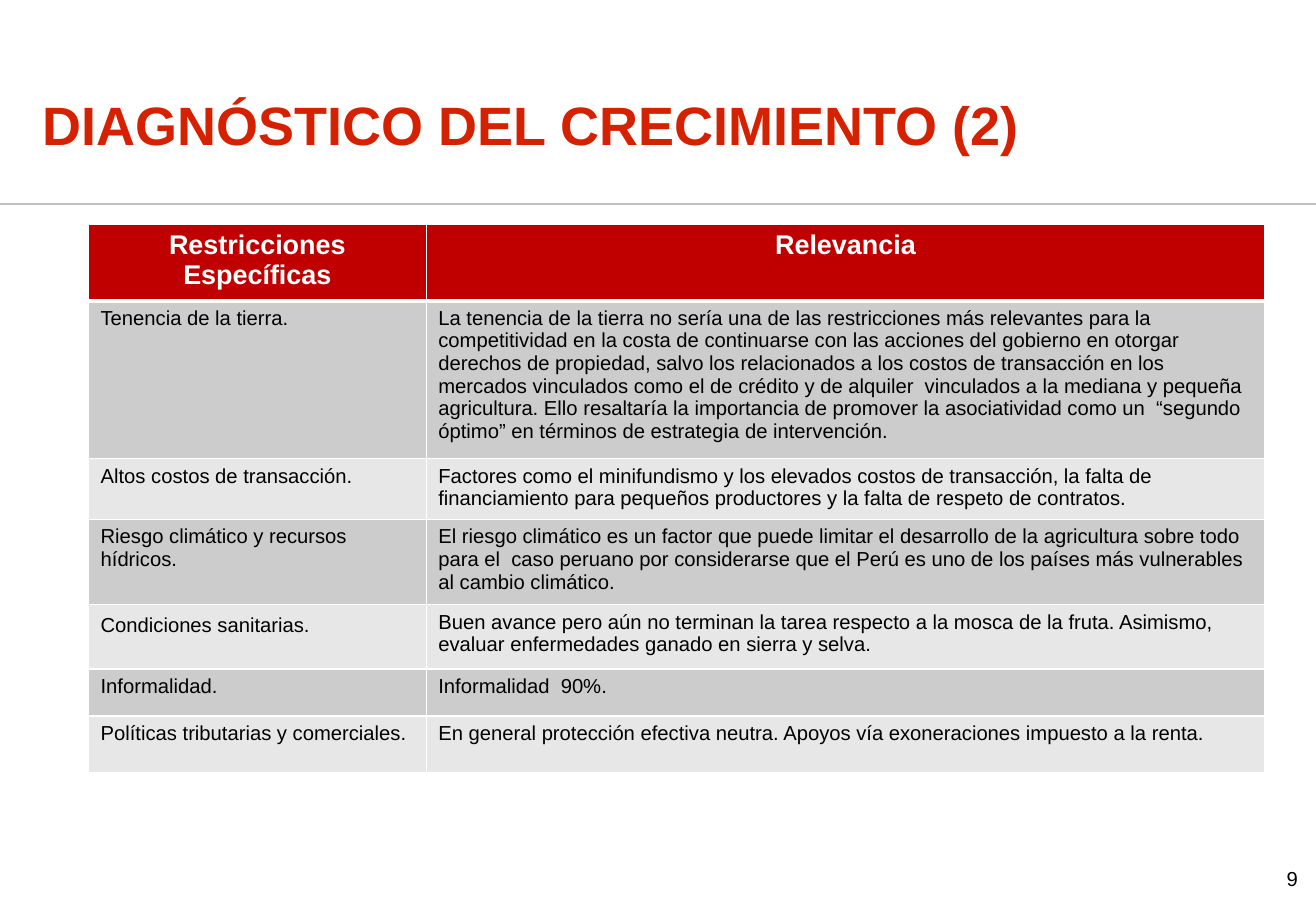
import pptx
import pptx.util
import pptx.dml.color
import pptx.enum.shapes
import pptx.enum.text
import pptx.oxml
import pptx.oxml.ns
from dataclasses import dataclass

Cm, Pt = pptx.util.Cm, pptx.util.Pt
RGB = pptx.dml.color.RGBColor.from_string
ALIGN = pptx.enum.text.PP_ALIGN
ANCHOR = pptx.enum.text.MSO_ANCHOR


@dataclass(frozen=True)
class Theme:
    font: str = "Arial"
    title: str = "D62100"
    rule: str = "BFBFBF"
    header: str = "C00000"
    bands: tuple = ("CCCCCC", "E7E7E7")
    white: str = "FFFFFF"
    text: str = "000000"
    title_size: int = 32
    header_size: int = 16
    body_size: int = 12


theme = Theme()


def write(tf, text, size, color, bold=False, align=ALIGN.LEFT):
    """Fill a text frame with one formatted paragraph and return it."""
    tf.text = text
    tf.word_wrap = True
    p = tf.paragraphs[0]
    p.alignment = align
    font = p.runs[0].font
    font.name, font.size, font.bold = theme.font, Pt(size), bold
    font.color.rgb = RGB(color)
    return p


def add_border(cell, side, width):
    """Draw one white cell edge; side is L, R, T or B."""
    cell._tc.get_or_add_tcPr().append(pptx.oxml.parse_xml(
        f'<a:ln{side} {pptx.oxml.ns.nsdecls("a")} w="{Pt(width)}"><a:solidFill>'
        f'<a:srgbClr val="{theme.white}"/></a:solidFill></a:ln{side}>'))


prs = pptx.Presentation()
prs.slide_width, prs.slide_height = Cm(27.51), Cm(19.05)
s = prs.slides.add_slide(prs.slide_layouts[6])

# Rule under the title
rule = s.shapes.add_connector(pptx.enum.shapes.MSO_CONNECTOR.STRAIGHT,
                              0, Cm(4.27), prs.slide_width, Cm(4.27))
rule.line.color.rgb = RGB(theme.rule)
rule.line.width = Pt(1.5)
rule._element.spPr.append(
    pptx.oxml.parse_xml(f'<a:effectLst {pptx.oxml.ns.nsdecls("a")}/>'))

# Title and page number
title = s.shapes.add_textbox(Cm(0.64), Cm(1.8), Cm(24), Cm(2.18))
write(title.text_frame, "DIAGNÓSTICO DEL CRECIMIENTO (2)",
      theme.title_size, theme.title, bold=True)

number = s.shapes.add_textbox(Cm(26.24), Cm(17.86), Cm(1.14), Cm(1.02))
number.text_frame.vertical_anchor = ANCHOR.MIDDLE
write(number.text_frame, "9", theme.body_size, theme.text, align=ALIGN.RIGHT)

# Table of constraints: row height in cm, constraint, relevance
rows = [
    (1.48, "Restricciones Específicas", "Relevancia"),
    (3.12, "Tenencia de la tierra.",
     "La tenencia de la tierra no sería una de las restricciones más relevantes "
     "para la competitividad en la costa de continuarse con las acciones del "
     "gobierno en otorgar derechos de propiedad, salvo los relacionados a los "
     "costos de transacción en los mercados vinculados como el de crédito y de "
     "alquiler  vinculados a la mediana y pequeña agricultura. Ello resaltaría la "
     "importancia de promover la asociatividad como un  “segundo óptimo” en "
     "términos de estrategia de intervención."),
    (1.2, "Altos costos de transacción.",
     "Factores como el minifundismo y los elevados costos de transacción, la falta "
     "de financiamiento para pequeños productores y la falta de respeto de "
     "contratos."),
    (1.67, "Riesgo climático y recursos hídricos.",
     "El riesgo climático es un factor que puede limitar el desarrollo de la "
     "agricultura sobre todo para el  caso peruano por considerarse que el Perú es "
     "uno de los países más vulnerables al cambio climático."),
    (1.35, "Condiciones sanitarias.",
     "Buen avance pero aún no terminan la tarea respecto a la mosca de la fruta. "
     "Asimismo, evaluar enfermedades ganado en sierra y selva."),
    (0.98, "Informalidad.", "Informalidad  90%."),
    (1.19, "Políticas tributarias y comerciales.",
     "En general protección efectiva neutra. Apoyos vía exoneraciones impuesto a "
     "la renta."),
]
col_widths = (7.06, 17.53)
table = s.shapes.add_table(len(rows), len(col_widths), Cm(1.85), Cm(4.68),
                           Cm(sum(col_widths)), Cm(sum(r[0] for r in rows))).table
for column, width in zip(table.columns, col_widths):
    column.width = Cm(width)

for i, (height, *texts) in enumerate(rows):
    table.rows[i].height = Cm(height)
    is_header = i == 0
    for j, text in enumerate(texts):
        cell = table.cell(i, j)
        add_border(cell, "L", 1)
        add_border(cell, "R", 1)
        add_border(cell, "T", 3 if i == 1 else 1)
        add_border(cell, "B", 3 if is_header else 1)
        cell.fill.solid()
        if is_header:
            cell.fill.fore_color.rgb = RGB(theme.header)
            write(cell.text_frame, text, theme.header_size, theme.white,
                  bold=True, align=ALIGN.CENTER)
        else:
            cell.fill.fore_color.rgb = RGB(theme.bands[(i - 1) % 2])
            write(cell.text_frame, text, theme.body_size, theme.text)

table.cell(4, 0).text_frame.paragraphs[0].line_spacing = 1.15
table.cell(5, 1).text_frame.paragraphs[0].alignment = ALIGN.JUSTIFY

prs.save("out.pptx")
